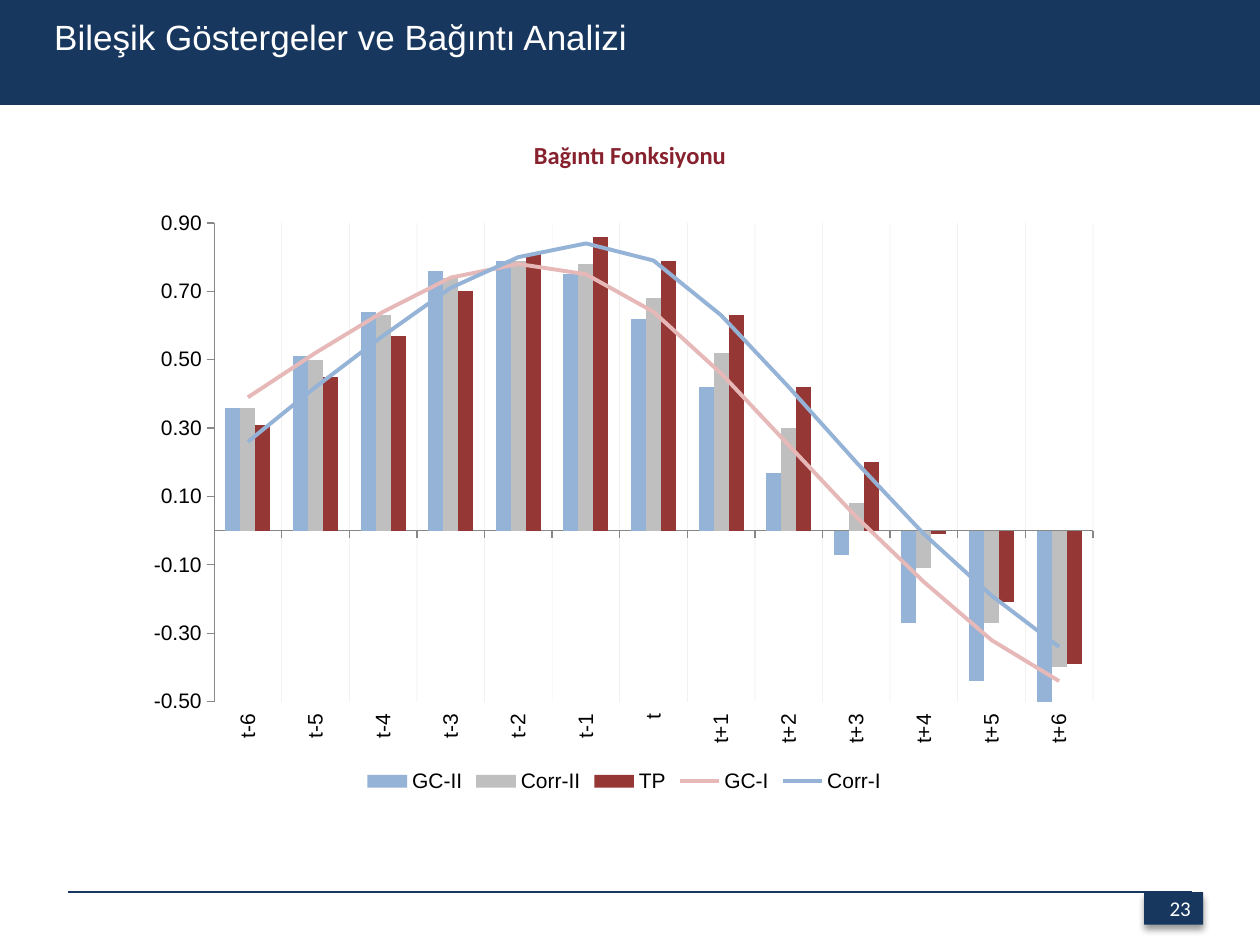
from lxml import etree
from pptx import Presentation
from pptx.chart.data import CategoryChartData
from pptx.dml.color import RGBColor
from pptx.enum.chart import (XL_CHART_TYPE, XL_LEGEND_POSITION, XL_MARKER_STYLE,
                             XL_TICK_LABEL_POSITION, XL_TICK_MARK)
from pptx.enum.dml import MSO_LINE
from pptx.enum.shapes import MSO_CONNECTOR, MSO_SHAPE
from pptx.enum.text import MSO_ANCHOR, MSO_AUTO_SIZE, PP_ALIGN
from pptx.oxml import parse_xml
from pptx.oxml.ns import nsdecls, qn
from pptx.util import Inches, Pt

COLUMNS = XL_CHART_TYPE.COLUMN_CLUSTERED
BOTTOM = XL_LEGEND_POSITION.BOTTOM
LOW = XL_TICK_LABEL_POSITION.LOW
OUTSIDE, NO_TICK = XL_TICK_MARK.OUTSIDE, XL_TICK_MARK.NONE
LEFT, CENTER, RIGHT = PP_ALIGN.LEFT, PP_ALIGN.CENTER, PP_ALIGN.RIGHT
TOP, MIDDLE = MSO_ANCHOR.TOP, MSO_ANCHOR.MIDDLE

# Content
TITLE = "Bileşik Göstergeler ve Bağıntı Analizi"
CHART_HEADING = "Bağıntı Fonksiyonu"
PAGE_NUMBER = "23"
LAGS = [f"t{lag:+d}" if lag else "t" for lag in range(-6, 7)]
BARS = [
    ("GC-II", "95B3D7", (0.36, 0.51, 0.64, 0.76, 0.79, 0.75, 0.62, 0.42, 0.17, -0.07, -0.27, -0.44, -0.54)),
    ("Corr-II", "BFBFBF", (0.36, 0.5, 0.63, 0.74, 0.79, 0.78, 0.68, 0.52, 0.3, 0.08, -0.11, -0.27, -0.4)),
    ("TP", "953735", (0.31, 0.45, 0.57, 0.7, 0.81, 0.86, 0.79, 0.63, 0.42, 0.2, -0.01, -0.21, -0.39)),
]
LINES = [
    ("GC-I", "E6B9B8", (0.39, 0.52, 0.64, 0.74, 0.78, 0.75, 0.64, 0.46, 0.25, 0.04, -0.15, -0.32, -0.44)),
    ("Corr-I", "95B3D7", (0.26, 0.42, 0.57, 0.71, 0.8, 0.84, 0.79, 0.63, 0.42, 0.2, -0.01, -0.19, -0.34)),
]

# Theme and layout
THEME = {
    "navy": "17375E", "axis": "888888", "black": "000000",
    "title": {"name": "Arial", "size": Pt(20), "color": "FFFFFF"},
    "heading": {"name": "Calibri", "size": Pt(14), "color": "87212E", "bold": True},
    "number": {"name": "Calibri", "size": Pt(12), "color": "FFFFFF"},
    "chart": {"name": "Arial", "size": Pt(12), "color": "000000"},
}
WIDTH, HEIGHT = 10, 7.5
FOOTER_TOP = 7.08
BOXES = {
    "band": (0, 0, WIDTH, HEIGHT / 9),
    "title": (0.33, 0.07, WIDTH - 0.33, 0.44),
    "heading": (WIDTH * 0.3, 1.06, WIDTH * 0.4, 0.34),
    "chart": (1.08, 1.58, 7.75, 4.75),
    "number": (9.08, FOOTER_TOP, 0.47, 0.26),
}
PLOT_AREA = {"x": 0.08, "y": 0.04, "w": 0.9, "h": 0.8}


def box(name):
    return [Inches(value) for value in BOXES[name]]


def color(value):
    return RGBColor.from_string(value)


def format_font(font, style):
    for key, value in style.items():
        if key == "color":
            font.color.rgb = color(value)
        else:
            setattr(font, key, value)


def write(shape, text, style, alignment, anchor, auto_size=MSO_AUTO_SIZE.NONE):
    frame = shape.text_frame
    frame.text = text
    settings = {"word_wrap": True, "vertical_anchor": anchor, "auto_size": auto_size}
    for key, value in settings.items():
        setattr(frame, key, value)
    paragraph = frame.paragraphs[0]
    paragraph.alignment = alignment
    format_font(paragraph.runs[0].font, style)


def add_rectangle(slide, name):
    shape = slide.shapes.add_shape(MSO_SHAPE.RECTANGLE, *box(name))
    shape.shadow.inherit = False
    shape.fill.solid()
    shape.fill.fore_color.rgb = color(THEME["navy"])
    shape.line.fill.background()
    return shape


def add_frame(slide):
    add_rectangle(slide, "band")
    rule = slide.shapes.add_connector(
        MSO_CONNECTOR.STRAIGHT, Inches(0.54), Inches(FOOTER_TOP), Inches(9.46), Inches(FOOTER_TOP))
    rule.line.color.rgb = color(THEME["navy"])
    rule.line.width = Pt(0.75)
    etree.SubElement(rule._element.spPr, qn("a:effectLst"))

    number = add_rectangle(slide, "number")
    write(number, PAGE_NUMBER, THEME["number"], RIGHT, MIDDLE)
    number._element.spPr.find(qn("a:effectLst")).append(parse_xml(
        f'<a:outerShdw {nsdecls("a")} blurRad="{Pt(4)}" dist="{Pt(3)}" dir="5400000" rotWithShape="0">'
        f'<a:srgbClr val="{THEME["black"]}"><a:alpha val="40000"/></a:srgbClr></a:outerShdw>'))


def move_to_line_plot(chart):
    """Give the series after the bars a line plot on the same axes."""
    bar_plot = chart.plots[0]._element
    line_plot = parse_xml(
        f'<c:lineChart {nsdecls("c")}><c:grouping val="standard"/><c:varyColors val="0"/></c:lineChart>')
    for series in bar_plot.findall(qn("c:ser"))[len(BARS):]:
        for bar_setting in series.findall(qn("c:invertIfNegative")):
            series.remove(bar_setting)
        line_plot.append(series)
    etree.SubElement(line_plot, qn("c:marker")).set("val", "1")
    for axis in bar_plot.findall(qn("c:axId")):
        etree.SubElement(line_plot, qn("c:axId")).set("val", axis.get("val"))
    bar_plot.addnext(line_plot)


def format_axes(chart):
    lags, values = chart.category_axis, chart.value_axis
    for axis in (lags, values):
        axis.major_tick_mark, axis.minor_tick_mark = OUTSIDE, NO_TICK
        axis.format.line.color.rgb = color(THEME["axis"])
        format_font(axis.tick_labels.font, THEME["chart"])
    lags.tick_label_position = LOW
    text_box = lags._element.find(qn("c:txPr")).find(qn("a:bodyPr"))
    text_box.set("rot", "-5400000")
    text_box.set("vert", "horz")
    lags.has_major_gridlines = True
    grid = lags.major_gridlines.format.line
    grid.color.rgb = color(THEME["axis"])
    grid.width = Pt(0.1)
    grid.dash_style = MSO_LINE.SQUARE_DOT
    grid_color = next(lags._element.find(qn("c:majorGridlines")).iter(qn("a:srgbClr")))
    etree.SubElement(grid_color, qn("a:alpha")).set("val", "33000")

    scale = {"minimum_scale": -0.5, "maximum_scale": 0.9, "major_unit": 0.2,
             "has_major_gridlines": False}
    for key, value in scale.items():
        setattr(values, key, value)
    values.tick_labels.number_format = "0.00"
    values.tick_labels.number_format_is_linked = False


def add_correlation_chart(slide):
    data = CategoryChartData(number_format="0.00")
    data.categories = LAGS
    for name, _, values in BARS + LINES:
        data.add_series(name, values)
    chart = slide.shapes.add_chart(COLUMNS, *box("chart"), data).chart
    chart.has_title = False
    format_font(chart.font, THEME["chart"])
    move_to_line_plot(chart)

    # Series
    bar_plot, line_plot = chart.plots
    bar_plot.gap_width, bar_plot.overlap = 150, 0
    bar_plot.vary_by_categories = False
    for series, (_, fill, _) in zip(bar_plot.series, BARS):
        series.invert_if_negative = False
        series.format.fill.solid()
        series.format.fill.fore_color.rgb = color(fill)
    for series, (_, stroke, _) in zip(line_plot.series, LINES):
        series.smooth = False
        series.marker.style = XL_MARKER_STYLE.NONE
        series.format.line.color.rgb = color(stroke)
        series.format.line.width = Pt(2.25)

    # Axes, legend and plot area
    format_axes(chart)
    chart.has_legend = True
    chart.legend.position = BOTTOM
    chart.legend.include_in_layout = False
    format_font(chart.legend.font, THEME["chart"])
    plot_area = chart._chartSpace.chart.plotArea
    for old in plot_area.findall(qn("c:layout")):
        plot_area.remove(old)
    shares = "".join(f'<c:{key} val="{value}"/>' for key, value in PLOT_AREA.items())
    plot_area.insert(0, parse_xml(
        f'<c:layout {nsdecls("c")}><c:manualLayout><c:layoutTarget val="inner"/>'
        f'<c:xMode val="edge"/><c:yMode val="edge"/>{shares}</c:manualLayout></c:layout>'))


def main():
    presentation = Presentation()
    presentation.slide_width, presentation.slide_height = Inches(WIDTH), Inches(HEIGHT)
    slide = presentation.slides.add_slide(presentation.slide_layouts[5])
    add_frame(slide)

    # Title, brought in front of the band
    title = slide.shapes.title
    title.left, title.top, title.width, title.height = box("title")
    write(title, TITLE, THEME["title"], LEFT, TOP, MSO_AUTO_SIZE.SHAPE_TO_FIT_TEXT)
    slide.shapes._spTree.append(title._element)

    add_correlation_chart(slide)
    heading = slide.shapes.add_textbox(*box("heading"))
    write(heading, CHART_HEADING, THEME["heading"], CENTER, TOP, MSO_AUTO_SIZE.SHAPE_TO_FIT_TEXT)
    presentation.save("out.pptx")


if __name__ == "__main__":
    main()
